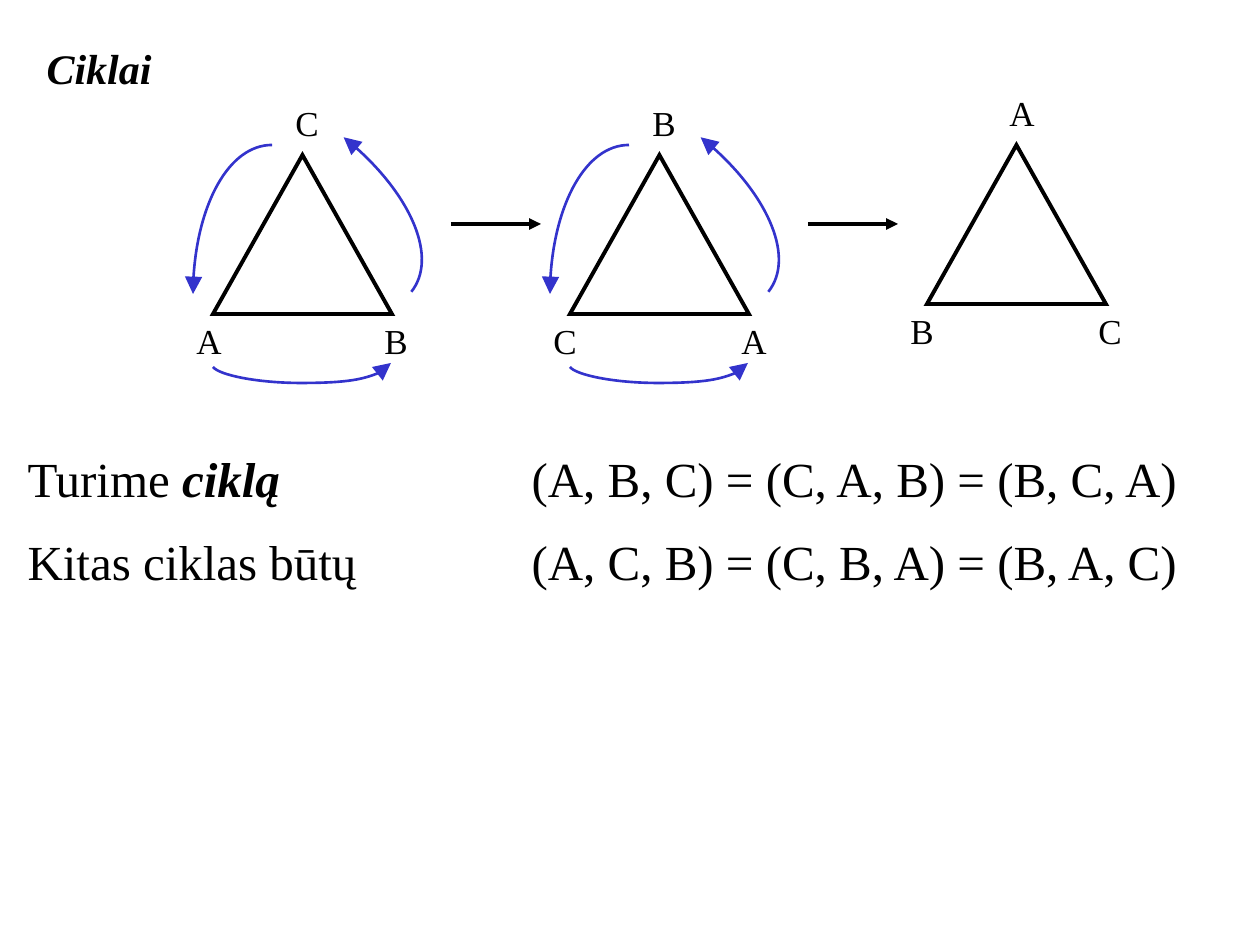
from lxml.etree import SubElement as sub
from pptx import Presentation
from pptx.dml.color import RGBColor
from pptx.enum.shapes import MSO_CONNECTOR as Conn, MSO_SHAPE as Form
from pptx.enum.text import MSO_ANCHOR as Anchor, MSO_AUTO_SIZE as Auto, PP_ALIGN as Align
from pptx.oxml.ns import qn
from pptx.util import Pt

PX = 914400 // 126  # EMU in one px
BLACK = RGBColor(0x00, 0x00, 0x00)
BLUE = RGBColor(0x33, 0x33, 0xCC)
FACE = "Times New Roman"

SIDE, TALL = 179, 159  # triangle width and height
STEP = 357  # from one triangle to the next
LEFT = 213
TURNS = [("ABC", 155), ("CAB", 155), ("BCA", 145)]  # corner letters, top
SPOTS = [(-29, 158), (159, 158), (70, -60)]  # label places by corner

# Curves relative to a triangle's top left: start, then three points per Bezier
SWEEP = [(59, -10), (16, -10), (-20, 57), (-20, 139)]
BOWL = [(0, 212), (6, 220), (44, 228), (88, 228), (137, 228), (178, 219), (178, 208)]


def emu(*vals):
    return [v * PX for v in vals]


def ink(shape, color, width, head=None):
    """Draw a mitred line, with an arrowhead of size head if given."""
    line = shape.line
    line.color.rgb = color
    line.width = Pt(width)
    stroke = line._get_or_add_ln()
    sub(stroke, qn("a:miter"), lim="800000")
    if head:
        sub(stroke, qn("a:tailEnd"), type="triangle", w=head, len=head)


def write(para, runs, size):
    """Fill a paragraph with (text, strong) runs."""
    para.alignment = Align.LEFT
    prop = para._p.get_or_add_pPr()
    for key, val in {"marL": "0", "indent": "0", "defTabSz": "914400"}.items():
        prop.set(key, val)
    sub(sub(prop, qn("a:spcBef")), qn("a:spcPct"), val="50000")
    sub(prop, qn("a:buNone"))
    for text, strong in runs:
        run = para.add_run()
        run.text = text
        look = {"name": FACE, "size": Pt(size), "bold": strong, "italic": strong}
        for key, val in look.items():
            setattr(run.font, key, val)
        run.font.color.rgb = BLACK


def fill(shape, box, rows, size):
    """Place a text holder and write its paragraphs."""
    for key, val in zip(("left", "top", "width", "height"), emu(*box)):
        setattr(shape, key, val)
    frame = shape.text_frame
    look = {"word_wrap": True, "auto_size": Auto.NONE, "vertical_anchor": Anchor.TOP}
    for key, val in look.items():
        setattr(frame, key, val)
    for i, runs in enumerate(rows):
        write(frame.add_paragraph() if i else frame.paragraphs[0], runs, size)


def label(shapes, x, y, text):
    box = (x, y, 49, 54)
    fill(shapes.add_textbox(*emu(*box)), box, [[(text, False)]], 20)


def corner(slide, x, y, names):
    """A triangle grouped with its three letters."""
    shapes = slide.shapes.add_group_shape().shapes
    tri = shapes.add_shape(Form.ISOSCELES_TRIANGLE, *emu(x, y, SIDE, TALL))
    tri.shadow.inherit = False
    tri.fill.background()
    ink(tri, BLACK, 2.25)
    for name, (dx, dy) in zip(names, SPOTS):
        label(shapes, x + dx, y + dy, name)


def curve(slide, x, y, spots, turn=0):
    """A blue Bezier arrow through the given control points."""
    first, *rest = [emu(x + dx, y + dy) for dx, dy in spots]
    build = slide.shapes.build_freeform(*first)
    build.add_line_segments(rest, close=False)
    shape = build.convert_to_shape()
    track = shape._element.xpath(".//a:path")[0]
    legs = track.findall(qn("a:lnTo"))
    for i in range(0, len(legs), 3):
        bend = sub(track, qn("a:cubicBezTo"))
        for leg in legs[i:i + 3]:
            bend.append(leg[0])
            track.remove(leg)
    shape.rotation = turn
    shape.shadow.inherit = False
    shape.fill.background()
    ink(shape, BLUE, 1.5, "lg")


def arrow(slide, x, y, span):
    line = slide.shapes.add_connector(Conn.STRAIGHT, *emu(x, y, x + span, y))
    ink(line, BLACK, 2.25, "med")
    sub(line._element.spPr, qn("a:effectLst"))


def main():
    deck = Presentation()
    deck.slide_width, deck.slide_height = emu(1260, 945)
    slide = deck.slides.add_slide(deck.slide_layouts[1])
    title, body = slide.placeholders

    # Heading
    fill(title, (34, 36, 1171, 63), [[("Ciklai", True)]], 24)

    # Triangles, with turning arrows between neighbours
    for i, (names, y) in enumerate(TURNS):
        x = LEFT + i * STEP
        corner(slide, x, y, names)
        if i < len(TURNS) - 1:
            curve(slide, x, y, SWEEP)
            curve(slide, x, y, BOWL)
            curve(slide, x + 145, y - 5, SWEEP, 128.4)
            arrow(slide, x + 238, y + 69, 90)

    # Cycles in writing
    rows = [
        [("Turime ", False), ("ciklą", True),
         (" \t\t(A, B, C) = (C, A, B) = (B, C, A)", False)],
        [("Kitas ciklas būtų \t\t(A, C, B) = (C, B, A) = (B, A, C)", False)],
    ]
    fill(body, (15, 442, 1230, 161), rows, 28)
    deck.save("out.pptx")


if __name__ == "__main__":
    main()
